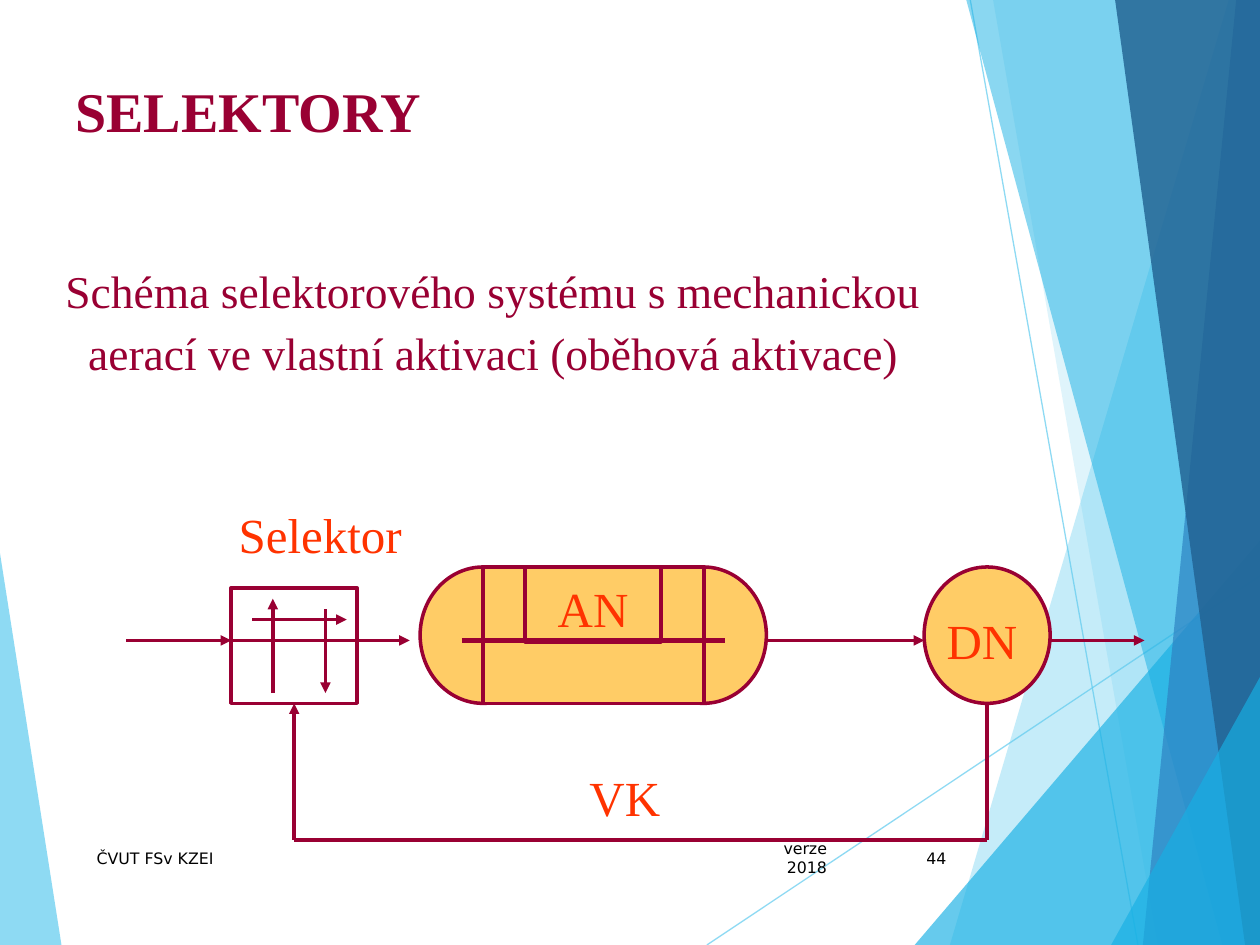
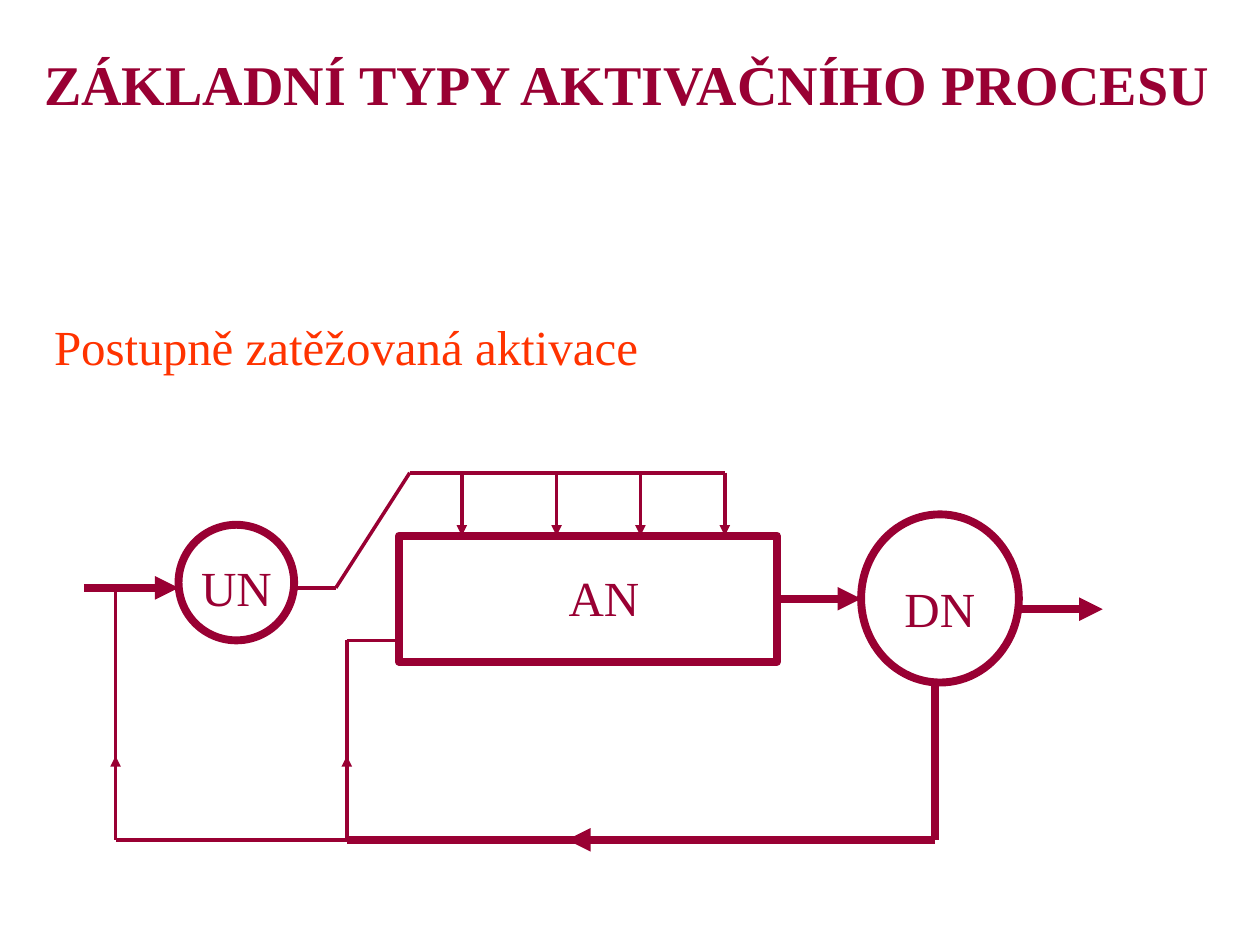
from dataclasses import dataclass
from itertools import pairwise
from typing import NamedTuple

from lxml.etree import SubElement
from pptx import Presentation
from pptx.dml.color import RGBColor
from pptx.enum.shapes import MSO_CONNECTOR, MSO_SHAPE
from pptx.enum.text import MSO_ANCHOR, PP_ALIGN
from pptx.oxml.ns import qn
from pptx.util import Cm, Pt


@dataclass(frozen=True)
class Theme:
    serif: str = "Times New Roman"
    sans: str = "DejaVu Sans"
    wine: str = "990033"
    red: str = "FF3300"
    sand: str = "FFCC66"
    black: str = "000000"
    sky: str = "5FCBEF"
    cyan: str = "17B0E4"
    blue: str = "2E83C3"
    navy: str = "226292"
    title: float = 32
    body: float = 26
    label: float = 28
    foot: float = 9
    hair: float = 0.75
    thin: float = 2
    mid: float = 3
    thick: float = 4.5


THEME = Theme()
WIDE, HIGH = 25.4, 19.05
RECT, OVAL = MSO_SHAPE.RECTANGLE, MSO_SHAPE.OVAL


class Box(NamedTuple):
    left: float
    top: float
    width: float
    height: float


class Style(NamedTuple):
    size: float
    color: str
    font: str = THEME.serif
    bold: bool = False
    align: PP_ALIGN = PP_ALIGN.LEFT
    anchor: MSO_ANCHOR = MSO_ANCHOR.TOP


class Facet(NamedTuple):
    points: list
    color: str
    alpha: int


class Wire(NamedTuple):
    points: list
    width: float = THEME.thin
    arrow: bool = False


class Node(NamedTuple):
    kind: MSO_SHAPE
    box: Box
    fill: str | None = None
    width: float = THEME.thin


TITLE = Style(THEME.title, THEME.wine, bold=True)
BODY = Style(THEME.body, THEME.wine)
HEAD = Style(THEME.label, THEME.red)
RED = HEAD._replace(align=PP_ALIGN.CENTER)
WINE = RED._replace(color=THEME.wine)
FOOT = Style(THEME.foot, THEME.black, THEME.sans, anchor=MSO_ANCHOR.MIDDLE)
RIGHT = FOOT._replace(align=PP_ALIGN.RIGHT)

# Background facets, back to front
FACETS = [
    Facet([(0, 11.15), (1.24, HIGH), (0, HIGH)], THEME.sky, 70),
    Facet([(24.77, 0), (19.15, HIGH), (WIDE, HIGH), (WIDE, 0)], THEME.sky, 36),
    Facet([(20.02, 0), (23.34, HIGH), (WIDE, HIGH), (WIDE, 0)], THEME.sky, 20),
    Facet([(18.44, HIGH), (WIDE, 10.9), (WIDE, HIGH)], THEME.cyan, 66),
    Facet([(19.48, 0), (24.64, HIGH), (WIDE, HIGH), (WIDE, 0)], THEME.cyan, 50),
    Facet([(24.92, 0), (23.04, HIGH), (WIDE, HIGH), (WIDE, 0)], THEME.blue, 70),
    Facet([(22.48, 0), (25.1, HIGH), (WIDE, HIGH), (WIDE, 0)], THEME.navy, 82),
    Facet([(22.4, HIGH), (WIDE, 13.65), (WIDE, HIGH)], THEME.cyan, 66),
]
RAYS = [[(14.25, HIGH), (WIDE, 11.61)], [(19.56, 0), (22.94, HIGH)]]


def fade(shape, alpha: int) -> None:
    """Make the colour of a facet or ray partly transparent."""
    for color in shape._element.spPr.iter(qn("a:srgbClr")):
        SubElement(color, qn("a:alpha")).set("val", str(alpha * 1000))


def write(shape, lines: list[str], style: Style):
    frame = shape.text_frame
    frame.word_wrap = True
    frame.vertical_anchor = style.anchor
    frame.text = "\n".join(lines)
    for para in frame.paragraphs:
        para.alignment = style.align
        for run in para.runs:
            font = run.font
            font.name, font.size, font.bold = style.font, Pt(style.size), style.bold
            font.color.rgb = RGBColor.from_string(style.color)
    return frame


def place(slide, box: Box, lines: list[str], style: Style):
    return write(slide.shapes.add_textbox(*map(Cm, box)), lines, style)


def draw(slide, node: Node):
    shape = slide.shapes.add_shape(node.kind, *map(Cm, node.box))
    shape.shadow.inherit = False
    if node.fill:
        shape.fill.solid()
        shape.fill.fore_color.rgb = RGBColor.from_string(node.fill)
    else:
        shape.fill.background()
    shape.line.color.rgb = RGBColor.from_string(THEME.wine)
    shape.line.width = Pt(node.width)
    return shape


def link(slide, start: tuple, end: tuple, color: str, width: float):
    line = slide.shapes.add_connector(
        MSO_CONNECTOR.STRAIGHT, *map(Cm, (*start, *end)))
    line.line.color.rgb = RGBColor.from_string(color)
    line.line.width = Pt(width)
    SubElement(line._element.spPr, qn("a:effectLst"))
    return line


def route(slide, wire: Wire) -> None:
    """Join the points by lines, with an arrow on the last if asked."""
    for start, end in pairwise(wire.points):
        line = link(slide, start, end, THEME.wine, wire.width)
    if wire.arrow:
        SubElement(line.line._get_or_add_ln(), qn("a:tailEnd")).set("type", "triangle")


def paint(slide, facet: Facet) -> None:
    start, *rest = [tuple(map(Cm, point)) for point in facet.points]
    pen = slide.shapes.build_freeform(*start)
    pen.add_line_segments(rest, close=True)
    shape = pen.convert_to_shape()
    shape.shadow.inherit = False
    shape.fill.solid()
    shape.fill.fore_color.rgb = RGBColor.from_string(facet.color)
    shape.line.fill.background()
    fade(shape, facet.alpha)


def backdrop(slide) -> None:
    paint(slide, FACETS[0])
    for start, end in RAYS:
        fade(link(slide, start, end, THEME.sky, THEME.hair), 70)
    for facet in FACETS[1:]:
        paint(slide, facet)


def begin(deck, title: str, box: Box):
    slide = deck.slides.add_slide(deck.slide_layouts[6])
    return slide, lambda: setattr(
        place(slide, box, [title], TITLE), "margin_top", Cm(0.28))


def selector(deck) -> None:
    slide, head = begin(deck, "SELEKTORY", Box(1.27, 1.27, 24.13, 1.85))
    backdrop(slide)
    head()
    body = place(slide, Box(1.07, 5.28, 24.33, 13.77), [
        "Schéma selektorového systému s mechanickou",
        "aerací ve vlastní aktivaci (oběhová aktivace)"], BODY)
    body.margin_top = Cm(0.2)
    first, second = body.paragraphs
    first.line_spacing = second.line_spacing = 0.83
    second.space_before = Pt(10)
    second._p.get_or_add_pPr().set("marL", str(Cm(0.46)))

    # Footer
    for left, width, text, style in [
        (15.01, 1.91, "verze 2018", RIGHT),
        (1.7, 12.85, "ČVUT FSv KZEI", FOOT),
        (17.91, 1.42, "44", RIGHT),
    ]:
        place(slide, Box(left, 16.79, width, 1.02), [text], style)

    # Tanks
    for node in [
        Node(RECT, Box(4.66, 11.85, 2.54, 2.33)),
        Node(OVAL, Box(8.47, 11.43, 2.54, 2.75), THEME.sand),
        Node(OVAL, Box(12.91, 11.43, 2.54, 2.75), THEME.sand),
        Node(RECT, Box(9.74, 11.43, 4.45, 2.75), THEME.sand),
        Node(OVAL, Box(18.63, 11.43, 2.54, 2.75), THEME.sand),
    ]:
        draw(slide, node)
    inner = draw(slide, Node(RECT, Box(10.58, 11.43, 2.75, 1.52)))
    write(inner, ["AN"], RED).margin_top = Cm(0.23)

    # Sludge return, selector flows, main flow
    flow = 12.91
    for wire in [
        Wire([(19.9, 14.18), (19.9, 16.93), (5.93, 16.93), (5.93, 14.18)], arrow=True),
        Wire([(5.5, 13.97), (5.5, 12.07)], arrow=True),
        Wire([(5.08, 12.49), (6.99, 12.49)], arrow=True),
        Wire([(6.56, 12.28), (6.56, 13.97)], arrow=True),
        Wire([(9.31, flow), (14.61, flow)], THEME.mid),
    ]:
        route(slide, wire)
    for start, end in [(2.54, 4.66), (4.66, 8.26), (15.45, 18.63), (21.17, 23.07)]:
        route(slide, Wire([(start, flow), (end, flow)], arrow=True))

    for text, left, top, width in [
        ("Selektor", 4.02, 9.95, 4.87),
        ("VK", 11.22, 15.24, 2.75),
        ("DN", 18.42, 12.07, 2.75),
    ]:
        place(slide, Box(left, top, width, 1.45), [text], RED).margin_top = Cm(0.23)


def stepped(deck) -> None:
    slide, head = begin(deck, "ZÁKLADNÍ TYPY AKTIVAČNÍHO PROCESU",
                        Box(0.64, 0.71, 24.13, 3.18))
    head()
    place(slide, Box(0.84, 6.15, 23.07, 2.62), ["Postupně zatěžovaná aktivace"],
          HEAD).margin_top = Cm(0.23)

    # Step feed into the tank
    for x in (9.31, 11.22, 12.91, 14.61):
        route(slide, Wire([(x, 9.53), (x, 10.8)], arrow=True))

    # Sludge return and main flow
    low, feed, thick = 16.93, 11.85, THEME.thick
    for wire in [
        Wire([(18.84, 13.76), (18.84, low), (11.43, low)], thick, True),
        Wire([(11.64, low), (6.99, low)], thick),
        Wire([(6.99, low), (6.99, 15.24)], arrow=True),
        Wire([(6.99, 15.45), (6.99, 12.91), (8.04, 12.91)]),
        Wire([(6.99, low), (2.33, low), (2.33, 15.24)], arrow=True),
        Wire([(2.33, 15.45), (2.33, feed)]),
        Wire([(1.69, feed), (3.6, feed)], thick, True),
        Wire([(5.93, feed), (6.77, feed), (8.26, 9.53), (14.61, 9.53)]),
        Wire([(15.66, 12.07), (17.36, 12.07)], thick, True),
        Wire([(20.53, 12.28), (22.23, 12.28)], thick, True),
    ]:
        route(slide, wire)

    # Tanks with their labels
    for kind, box, text, spot in [
        (OVAL, Box(3.6, 10.58, 2.33, 2.33), "UN", Box(3.6, 11.01, 2.33, 1.45)),
        (RECT, Box(8.04, 10.8, 7.62, 2.54), "AN", Box(11.01, 11.22, 2.33, 1.45)),
        (OVAL, Box(17.36, 10.37, 3.18, 3.39), "DN", Box(17.57, 11.43, 2.75, 1.45)),
    ]:
        draw(slide, Node(kind, box, width=thick))
        place(slide, spot, [text], WINE).margin_top = Cm(0.23)


def main() -> None:
    deck = Presentation()
    deck.slide_width, deck.slide_height = Cm(WIDE), Cm(HIGH)
    selector(deck)
    stepped(deck)
    deck.save("out.pptx")


if __name__ == "__main__":
    main()
